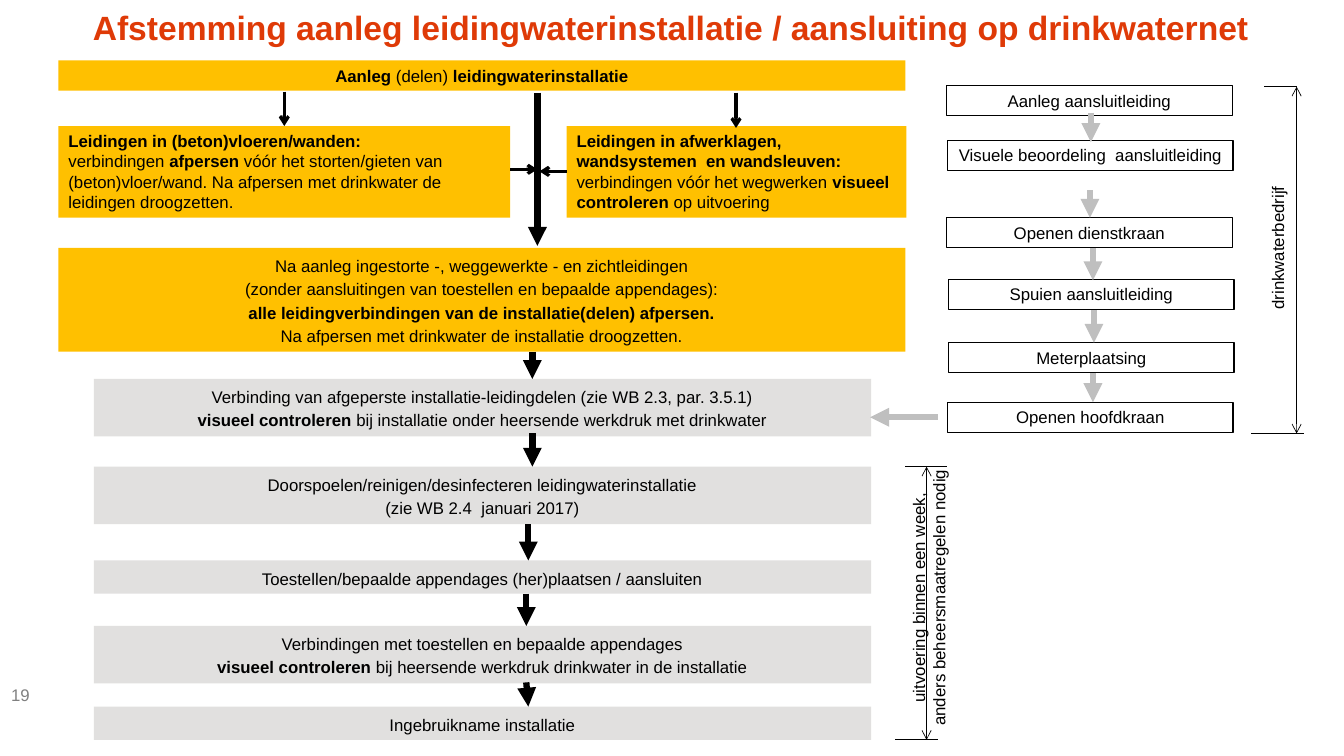
from pptx import Presentation
from pptx.dml.color import RGBColor
from pptx.enum import shapes, text
from pptx.oxml import ns, xmlchemy
from pptx.util import Inches, Pt

HUES = {
    "gold": "FFC000", "pale": "E1E0DF", "black": "000000",
    "gray": "BFBFBF", "red": "DF3A07", "dim": "808080",
}
LEFT, MID = text.PP_ALIGN.LEFT, text.PP_ALIGN.CENTER

GOLD = [
    (0.58, 0.6, 8.4, 0.3, MID, 1,
     "**Aanleg** (delen) **leidingwaterinstallatie**"),
    (0.58, 1.25, 4.48, 0.91, LEFT, 1,
     "**Leidingen in (beton)vloeren/wanden:**\n"
     "verbindingen **afpersen** vóór het storten/gieten van "
     "(beton)vloer/wand. Na afpersen met drinkwater de leidingen droogzetten."),
    (5.62, 1.25, 3.37, 0.91, LEFT, 1,
     "**Leidingen in afwerklagen, wandsystemen  en wandsleuven:  **"
     "verbindingen vóór het wegwerken **visueel controleren** op uitvoering"),
    (0.58, 2.46, 8.4, 1.03, MID, 1.15,
     "Na aanleg ingestorte -, weggewerkte - en zichtleidingen\n"
     "(zonder aansluitingen van toestellen en bepaalde appendages):\n"
     "**alle leidingverbindingen van de installatie(delen) afpersen.**\n"
     "Na afpersen met drinkwater de installatie droogzetten."),
]
PALE = [
    (3.76, 0.57,
     "Verbinding van afgeperste installatie-leidingdelen (zie WB 2.3, par. 3.5.1)\n"
     "**visueel controleren** bij installatie onder heersende werkdruk met drinkwater"),
    (4.63, 0.57,
     "Doorspoelen/reinigen/desinfecteren leidingwaterinstallatie\n"
     "(zie WB 2.4  januari 2017)"),
    (5.56, 0.33, "Toestellen/bepaalde appendages (her)plaatsen / aansluiten"),
    (6.21, 0.57,
     "Verbindingen met toestellen en bepaalde appendages\n"
     "**visueel controleren** bij heersende werkdruk drinkwater in de installatie"),
    (7.01, 0.33, "Ingebruikname installatie"),
]
SUPPLY = [
    (9.39, 0.85, "Aanleg aansluitleiding"),
    (9.4, 1.39, "Visuele beoordeling  aansluitleiding"),
    (9.39, 2.16, "Openen dienstkraan"),
    (9.41, 2.77, "Spuien aansluitleiding"),
    (9.41, 3.4, "Meterplaatsing"),
    (9.4, 3.99, "Openen hoofdkraan"),
]
# Each arrow: x1, y1, x2, y2
THIN = [
    (2.82, 0.91, 2.82, 1.25), (7.3, 0.92, 7.3, 1.27),
    (5.06, 1.68, 5.33, 1.68), (5.62, 1.7, 5.35, 1.7),
]
MAIN = [
    (5.33, 0.92, 5.33, 2.44), (5.28, 3.49, 5.28, 3.76),
    (5.28, 4.3, 5.28, 4.63), (5.24, 5.2, 5.24, 5.56),
    (5.22, 5.89, 5.22, 6.21), (5.22, 6.77, 5.24, 7.01),
]
SIDE = [
    (9.3, 4.14, 8.63, 4.14), (10.82, 1.12, 10.82, 1.41),
    (10.81, 1.89, 10.81, 2.16), (10.84, 2.46, 10.84, 2.78),
    (10.85, 3.08, 10.85, 3.4), (10.84, 3.7, 10.84, 3.99),
]
SPANS = [
    (12.86, 0.86, 12.86, 4.3), (9.19, 4.63, 9.19, 7.34),
]
ENDS = [
    (12.54, 0.86, 12.86, 0.86), (12.41, 4.3, 12.93, 4.3),
    (8.98, 4.63, 9.39, 4.63), (8.88, 7.34, 9.3, 7.34),
]


def rgb(hue):
    return RGBColor.from_string(HUES[hue])


def write(frame, copy, align=MID, space=1, size=12, hue="black", bold=False):
    """Fill a frame: one paragraph per line, with **marks** around bold words."""
    frame.vertical_anchor = text.MSO_ANCHOR.TOP
    for i, line in enumerate(copy.split("\n")):
        para = frame.add_paragraph() if i else frame.paragraphs[0]
        para.alignment, para.line_spacing = align, space
        font = para.font
        font.name, font.size, font.bold = "Arial", Pt(size), bold
        font.color.rgb = rgb(hue)
        for j, part in enumerate(line.split("**")):
            if part:
                run = para.add_run()
                run.text = part
                if j % 2:
                    run.font.bold = True


def add_box(slide, x, y, w, h, copy, fill=None, align=MID, space=1):
    """Add a filled step, or an outlined one when no fill is given."""
    box = slide.shapes.add_shape(
        shapes.MSO_SHAPE.RECTANGLE, Inches(x), Inches(y), Inches(w), Inches(h))
    box.shadow.inherit = False
    if fill:
        box.fill.solid()
        box.fill.fore_color.rgb = rgb(fill)
        box.line.fill.background()
    else:
        box.fill.background()
        box.line.color.rgb = rgb("black")
        box.line.width = Pt(0.75)
    box.text_frame.word_wrap = True
    write(box.text_frame, copy, align, space)


def add_line(slide, ends, width, hue="black", head=None, tail=None):
    line = slide.shapes.add_connector(
        shapes.MSO_CONNECTOR.STRAIGHT, *map(Inches, ends))
    line.line.width = Pt(width)
    line.line.color.rgb = rgb(hue)
    for tag, kind in (("headEnd", head), ("tailEnd", tail)):
        if kind:
            tip = xmlchemy.OxmlElement(f"a:{tag}")
            tip.set("type", kind)
            line.line._get_or_add_ln().append(tip)
    line._element.spPr.append(
        line._element.makeelement(ns.qn("a:effectLst"), {}))


def add_text(slide, x, y, w, h, copy, turn=0, **style):
    box = slide.shapes.add_textbox(Inches(x), Inches(y), Inches(w), Inches(h))
    box.rotation = turn
    box.text_frame.word_wrap = False
    write(box.text_frame, copy, **style)
    return box.text_frame


def add_title(slide, copy):
    title = slide.shapes.title
    title.left, title.top = Inches(0.82), Inches(0.02)
    title.width, title.height = Inches(12.4), Inches(0.5)
    title.text_frame.auto_size = text.MSO_AUTO_SIZE.NONE
    write(title.text_frame, copy, LEFT, size=24, hue="red", bold=True)


def main():
    deck = Presentation()
    deck.slide_width, deck.slide_height = Inches(13.33), Inches(7.5)
    slide = deck.slides.add_slide(deck.slide_layouts[5])
    add_title(slide, "Afstemming aanleg leidingwaterinstallatie / "
                     "aansluiting op drinkwaternet")

    for x, y, w, h, align, space, copy in GOLD:
        add_box(slide, x, y, w, h, copy, "gold", align, space)
    for y, h, copy in PALE:
        add_box(slide, 0.93, y, 7.71, h, copy, "pale", space=1.15)
    for x, y, copy in SUPPLY:
        add_box(slide, x, y, 2.83, 0.3, copy)

    for ends in SPANS:
        add_line(slide, ends, 0.5, head="arrow", tail="arrow")
    for ends in ENDS:
        add_line(slide, ends, 0.5)
    for ends in THIN:
        add_line(slide, ends, 2.25, tail="arrow")
    for ends in MAIN:
        add_line(slide, ends, 4.5, tail="triangle")
    for ends in SIDE:
        add_line(slide, ends, 4.5, "gray", tail="triangle")

    add_text(slide, 11.93, 2.31, 1.48, 0.3, "drinkwaterbedrijf", 270)
    add_text(slide, 7.81, 5.68, 2.8, 0.5,
             "uitvoering binnen een week,\nanders beheersmaatregelen nodig", 270)
    page = add_text(slide, 0.11, 6.69, 0.71, 0.4, "19", align=LEFT, hue="dim")
    page.margin_left = page.margin_top = page.margin_right = page.margin_bottom = 0
    page.word_wrap = True
    page.vertical_anchor = text.MSO_ANCHOR.MIDDLE
    deck.save("out.pptx")


if __name__ == "__main__":
    main()
